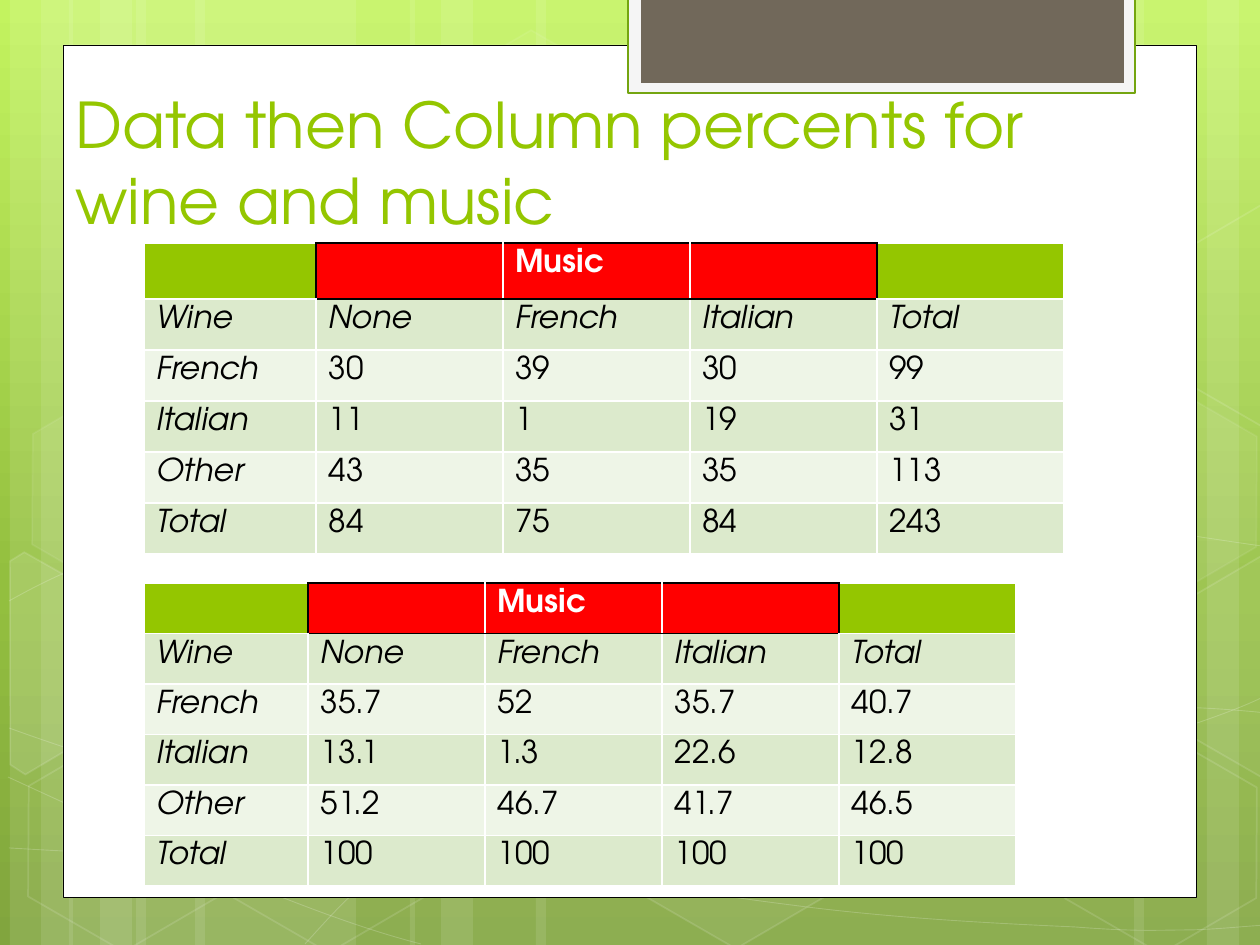
from dataclasses import dataclass
from math import cos, radians, sin

from lxml.etree import SubElement
from pptx import Presentation
from pptx.dml.color import RGBColor
from pptx.enum.shapes import MSO_SHAPE as Preset
from pptx.enum.text import MSO_ANCHOR as Anchor
from pptx.oxml.ns import qn
from pptx.util import Emu, Pt

SCALE = 914400 / 126
WIDTH, HEIGHT = 1260, 945
TILT = 30


@dataclass(frozen=True)
class Theme:
    font: str = "TeX Gyre Adventor"
    title_size: int = 36
    table_size: int = 18
    white: str = "FFFFFF"
    black: str = "000000"
    green: str = "94C600"
    red: str = "FF0000"
    bands: tuple = ("EEF5E7", "DCEACC")
    tab_fill: str = "F5F5F5"
    tab_line: str = "74A510"
    tab_inner: str = "71685A"
    backdrop: tuple = ((0, "C3F35F"), (62, "93BF3F"), (100, "81A53E"))


THEME = Theme()

BAND_GROUPS = [(10, 220), (69, 220), (410, 388)]
RIGHT_BANDS = [(924, 220), (1207, 63), (1134, 105)]

CURVES = [
    [(9, 848), (77, 852), (145, 856), (239, 854), (334, 853), (451, 850), (577, 838),
     (703, 825), (882, 801), (998, 777), (1113, 753), (1231, 715), (1269, 694)],
    [(9, 601), (45, 581), (82, 562), (152, 543), (224, 524), (326, 496), (437, 488),
     (549, 480), (685, 478), (824, 488), (963, 498), (1193, 537), (1269, 547)],
    [(8, 777), (160, 847), (311, 916), (421, 944)],
    [(9, 728), (48, 742), (88, 756), (161, 776), (234, 795), (344, 827), (450, 848),
     (554, 869), (687, 892), (791, 905), (896, 919), (1008, 924), (1075, 927),
     (1140, 932), (1158, 930), (1191, 930), (1223, 929), (1246, 926), (1269, 925)],
    [(305, 944), (328, 919), (350, 893), (381, 871), (411, 848), (454, 823), (489, 805),
     (524, 788), (546, 780), (592, 767), (638, 754), (722, 737), (766, 728),
     (811, 719), (818, 719), (857, 717), (896, 713), (958, 709), (1000, 708),
     (1045, 707), (1116, 708), (1116, 708), (1144, 708), (1173, 708), (1201, 708),
     (1223, 709), (1245, 711), (1256, 712), (1264, 713), (1260, 712), (1268, 713)],
]

HEXAGONS = [
    (421, 45, 4, 8), (626, 742, 6, 12), (14, 745, None, 12), (18, 393, 7, 8),
    (219, 746, None, 12), (949, 571, 10, 12), (1051, 747, None, 12), (1051, 396, 7, 8),
]
LEFT_SHARD = [(10, 561), (24, 552), (121, 607), (120, 718), (25, 774), (10, 765)]
RIGHT_SHARD = [(1167, 611), (1261, 556), (1271, 562), (1271, 772), (1263, 777), (1167, 722)]
UPPER_SHARD = [(x, y - 351) for x, y in RIGHT_SHARD]
SHARDS = [
    (LEFT_SHARD, (45, 674), 10), (RIGHT_SHARD, (1241, 655), 4), (UPPER_SHARD, (1241, 304), None),
]

HEADER = ["", "", "Music", "", ""]
COLUMNS = ["Wine", "None", "French", "Italian", "Total"]
COUNTS = [
    HEADER, COLUMNS,
    ["French", "30", "39", "30", "99"],
    ["Italian", "11", "1", "19", "31"],
    ["Other", "43", "35", "35", "113"],
    ["Total", "84", "75", "84", "243"],
]
PERCENTS = [
    HEADER, COLUMNS,
    ["French", "35.7", "52", "35.7", "40.7"],
    ["Italian", "13.1", "1.3", "22.6", "12.8"],
    ["Other", "51.2", "46.7", "41.7", "46.5"],
    ["Total", "100", "100", "100", "100"],
]


def px(length):
    return Emu(round(length * SCALE))


def apply_format(target, values):
    for name, value in values.items():
        setattr(target, name, value)


def paint(fill_format, color, alpha=100):
    fill_format.solid()
    fill_format.fore_color.rgb = RGBColor.from_string(color)
    if alpha < 100:
        for node in fill_format.fore_color._xFill.iter(qn("a:srgbClr")):
            SubElement(node, qn("a:alpha"), val=str(alpha * 1000))


def style_shape(shape, fill=None, alpha=100, line=None, width=1, line_alpha=100):
    shape.shadow.inherit = False
    if fill and alpha:
        paint(shape.fill, fill, alpha)
    else:
        shape.fill.background()
    if line:
        paint(shape.line.fill, line, line_alpha)
        shape.line.width = Pt(width)
    else:
        shape.line.fill.background()


def add_preset(slide, preset, box, **style):
    shape = slide.shapes.add_shape(preset, *map(px, box))
    style_shape(shape, **style)
    return shape


def add_outline(slide, points, closed, **style):
    builder = slide.shapes.build_freeform(*points[0], scale=SCALE)
    builder.add_line_segments(points[1:], close=closed)
    shape = builder.convert_to_shape()
    style_shape(shape, **style)
    return shape


def add_curve(slide, points):
    shape = add_outline(slide, points, False, line=THEME.white, width=0.5, line_alpha=20)
    outline = next(shape.element.iter(qn("a:path")))
    segments = outline.findall(qn("a:lnTo"))
    for start in range(0, len(segments), 3):
        cubic = SubElement(outline, qn("a:cubicBezTo"))
        for segment in segments[start:start + 3]:
            cubic.append(segment[0])
            outline.remove(segment)


def add_shard(slide, points, center, alpha):
    cosine, sine = cos(radians(TILT)), sin(radians(TILT))
    offsets = [(x - center[0], y - center[1]) for x, y in points]
    upright = [(center[0] + dx * cosine + dy * sine, center[1] - dx * sine + dy * cosine)
               for dx, dy in offsets]
    shard = add_outline(slide, upright, True, fill=THEME.white, alpha=alpha,
                        line=THEME.white, line_alpha=12)
    shard.rotation = TILT


def add_hexagon(slide, left, top, alpha, line_alpha):
    hexagon = add_preset(slide, Preset.HEXAGON, (left, top, 220, 192), fill=THEME.white,
                         alpha=alpha, line=THEME.white, line_alpha=line_alpha)
    hexagon.adjustments[0], hexagon.adjustments[1] = 0.285, 1.155
    hexagon.rotation = TILT


def add_backdrop(slide):
    fill = slide.background.fill
    fill.gradient()
    fill.gradient_angle = 270
    stops = next(slide.element.iter(qn("a:gsLst")))
    for stop in list(stops):
        stops.remove(stop)
    for position, color in THEME.backdrop:
        stop = SubElement(stops, qn("a:gs"), pos=str(position * 1000))
        SubElement(stop, qn("a:srgbClr"), val=color)


def add_decoration(slide):
    bands = [band for left, wide in BAND_GROUPS
             for band in ((left + 126, wide), (left, 63), (left + 31, 105))]
    for left, width in bands + RIGHT_BANDS:
        add_preset(slide, Preset.RECTANGLE, (left, 0, width, HEIGHT), fill=THEME.white, alpha=10)
    for curve in CURVES:
        add_curve(slide, curve)
    for hexagon in HEXAGONS:
        add_hexagon(slide, *hexagon)
    for shard in SHARDS:
        add_shard(slide, *shard)


def add_panel(slide):
    add_preset(slide, Preset.RECTANGLE, (63, 45, 1134, 853), fill=THEME.white,
               line=THEME.black, width=0.5)
    add_preset(slide, Preset.RECTANGLE, (628, -3, 507, 96), fill=THEME.tab_fill,
               line=THEME.tab_line, width=1.25)
    add_preset(slide, Preset.RECTANGLE, (641, -3, 483, 86), fill=THEME.tab_inner)


def write_text(frame, text, size, color, **extra):
    run = frame.paragraphs[0].add_run()
    run.text = text
    apply_format(run.font, {"name": THEME.font, "size": Pt(size), **extra})
    run.font.color.rgb = RGBColor.from_string(color)


def add_title(slide, text):
    frame = slide.shapes.add_textbox(*map(px, (63, 86, 1110, 157))).text_frame
    apply_format(frame, {"word_wrap": True, "vertical_anchor": Anchor.BOTTOM})
    write_text(frame, text, THEME.title_size, THEME.green)


def black_sides(row, column):
    inside = 1 <= column <= 3
    rules = {"L": row == 0 and column in (1, 4), "R": row == 0 and column in (0, 3),
             "T": row < 2 and inside, "B": row == 0 and inside}
    return [side for side, drawn in rules.items() if drawn]


def style_cell(cell, row, column, text):
    properties = cell._tc.get_or_add_tcPr()
    for side in black_sides(row, column):
        line = SubElement(properties, qn(f"a:ln{side}"), w=str(Pt(1)))
        SubElement(SubElement(line, qn("a:solidFill")), qn("a:srgbClr"), val=THEME.black)
    header_fill = THEME.red if 1 <= column <= 3 else THEME.green
    paint(cell.fill, THEME.bands[row % 2] if row else header_fill)
    if text:
        write_text(cell.text_frame, text, THEME.table_size, THEME.black if row else THEME.white,
                   bold=row == 0, italic=row == 1 or (row > 1 and column == 0))


def add_data_table(slide, rows, top, widths, heights):
    box = (144, top, sum(widths), sum(heights))
    table = slide.shapes.add_table(len(rows), len(widths), *map(px, box)).table
    for column, width in zip(table.columns, widths):
        column.width = px(width)
    for row, height in zip(table.rows, heights):
        row.height = px(height)
    for row, texts in enumerate(rows):
        for column, text in enumerate(texts):
            style_cell(table.cell(row, column), row, column, text)


def main():
    presentation = Presentation()
    apply_format(presentation, {"slide_width": px(WIDTH), "slide_height": px(HEIGHT)})
    slide = presentation.slides.add_slide(presentation.slide_layouts[6])
    add_backdrop(slide)
    add_decoration(slide)
    add_panel(slide)
    add_title(slide, "Data then Column percents for wine and music")
    add_data_table(slide, COUNTS, 243, [172] + [187] * 4, [56] + [51] * 5)
    add_data_table(slide, PERCENTS, 583, [164] + [177] * 4, [42] * 6)
    presentation.save("out.pptx")


if __name__ == "__main__":
    main()
